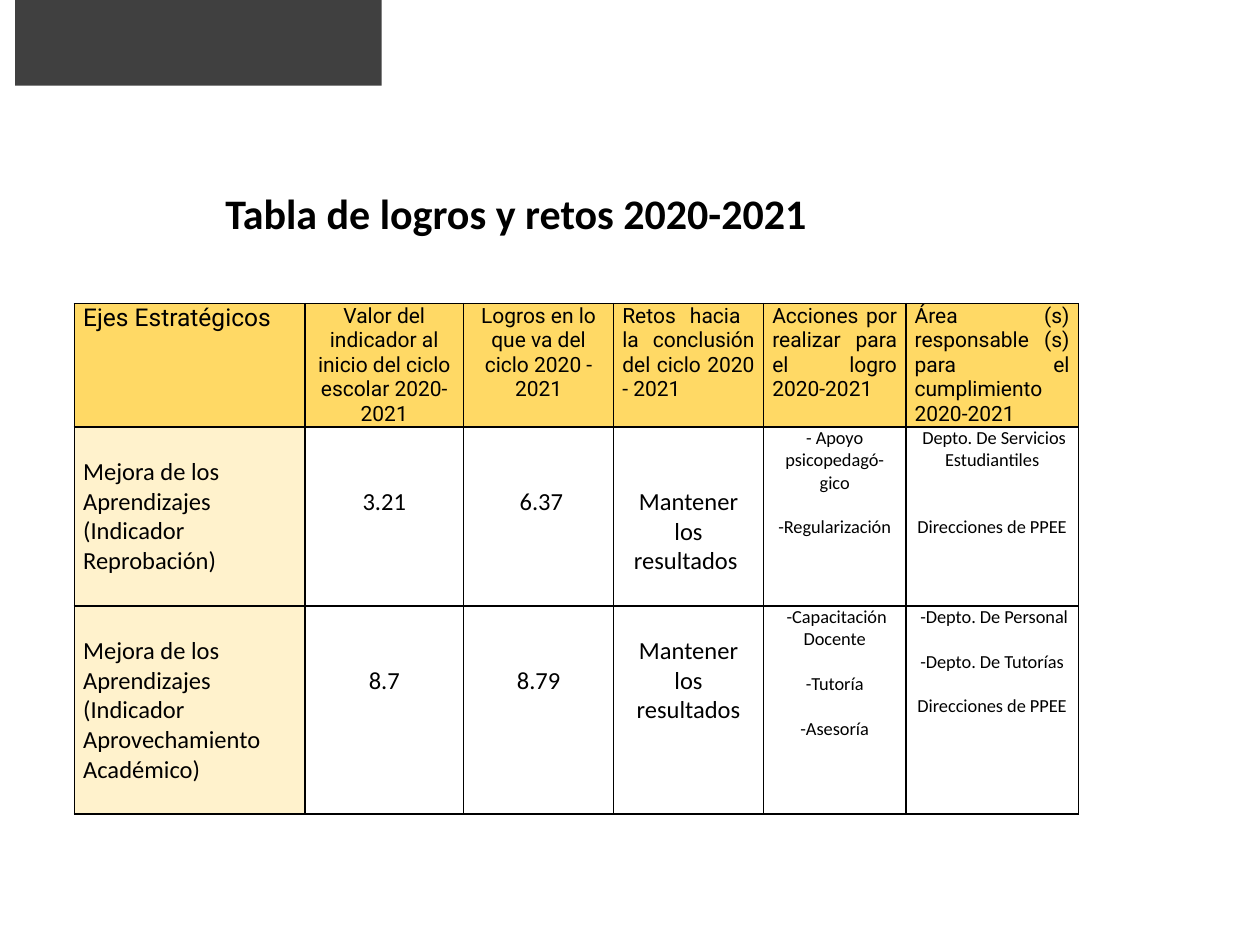
from lxml import etree
from pptx import Presentation
from pptx.dml.color import RGBColor
from pptx.enum import shapes, text
from pptx.oxml import ns
from pptx.util import Inches, Pt

MID, JUST, LEFT = text.PP_ALIGN.CENTER, text.PP_ALIGN.JUSTIFY, text.PP_ALIGN.LEFT
BLACK, WHITE, GOLD, CREAM = "000000", "FFFFFF", "FFD965", "FFF2CC"
LEAD = 1.22  # line height as a share of the text size

COLS = [1.83, 1.26, 1.19, 1.19, 1.13, 1.37]
ROWS = [0.98, 1.42, 1.65]

# Header cells: text, size, alignment
HEADS = [
    ("Ejes Estratégicos", 14, JUST),
    ("Valor del indicador al inicio del ciclo escolar 2020-2021", 12, MID),
    ("Logros en lo que va del ciclo 2020 - 2021", 12, MID),
    ("Retos hacia  la  conclusión del ciclo 2020 - 2021", 12, JUST),
    ("Acciones por realizar para el logro 2020-2021", 12, JUST),
    ("Área (s) responsable (s) para el cumplimiento 2020-2021", 12, JUST),
]
# Body cells: lines left free at the top, lines between paragraphs, paragraphs
BODY = [
    [
        (1, 0, ["Mejora de los Aprendizajes", "(Indicador Reprobación)"]),
        (2, 0, ["3.21"]),
        (2, 0, [" 6.37"]),
        (2, 0, ["Mantener los resultados "]),
        (0, 1, ["- Apoyo psicopedagó-gico", "-Regularización"]),
        (0, 2, [" Depto. De Servicios Estudiantiles", "Direcciones de PPEE"]),
    ],
    [
        (1, 0, ["Mejora de los Aprendizajes",
                "(Indicador Aprovechamiento Académico)"]),
        (2, 0, ["8.7"]),
        (2, 0, ["8.79"]),
        (1, 0, ["Mantener los resultados"]),
        (0, 1, [" -Capacitación Docente", "-Tutoría", "-Asesoría"]),
        (0, 1, [" -Depto. De Personal", "-Depto. De Tutorías",
                "Direcciones de PPEE"]),
    ],
]


def tint(code):
    return RGBColor.from_string(code)


def add_run(para, words, size, font="Calibri", bold=False):
    run = para.add_run()
    run.text = words
    run.font.size, run.font.name = Pt(size), font
    run.font.bold = bold
    run.font.color.rgb = tint(BLACK)


def edge(cell):
    """Draw a thin black line on the four sides of a cell."""
    props = cell._tc.get_or_add_tcPr()
    for side in ("lnL", "lnR", "lnT", "lnB"):
        line = etree.SubElement(props, ns.qn("a:" + side), w=str(Pt(1)))
        fill = etree.SubElement(line, ns.qn("a:solidFill"))
        etree.SubElement(fill, ns.qn("a:srgbClr"), val=BLACK)


def fill_cell(cell, lines, size, align, back, font="Calibri", top=0, gap=0):
    edge(cell)
    cell.fill.solid()
    cell.fill.fore_color.rgb = tint(back)
    cell.margin_left = cell.margin_right = Inches(0.07)
    cell.margin_top, cell.margin_bottom = Pt(round(top * size * LEAD, 1)), 0
    frame = cell.text_frame
    for i, words in enumerate(lines):
        para = frame.add_paragraph() if i else frame.paragraphs[0]
        para.alignment = align
        if i and gap:
            para.space_before = Pt(round(gap * size * LEAD, 1))
        add_run(para, words, size, font)


def add_band(slide, x, y, w, h):
    band = slide.shapes.add_shape(
        shapes.MSO_SHAPE.RECTANGLE, Inches(x), Inches(y), Inches(w), Inches(h))
    band.shadow.inherit = False
    band.fill.solid()
    band.fill.fore_color.rgb = tint("404040")
    band.line.fill.background()


def add_title(slide, x, y, w, h):
    box = slide.shapes.add_textbox(Inches(x), Inches(y), Inches(w), Inches(h))
    box.text_frame.word_wrap = True
    add_run(box.text_frame.paragraphs[0],
            "Tabla de logros y retos 2020-2021", 24, bold=True)


def add_goals(slide, x, y, w, h):
    table = slide.shapes.add_table(
        len(ROWS), len(COLS), Inches(x), Inches(y), Inches(w), Inches(h)).table
    table.horz_banding = False
    for col, wide in zip(table.columns, COLS):
        col.width = Inches(wide)
    for row, high in zip(table.rows, ROWS):
        row.height = Inches(high)
    # Header row
    for c, (words, size, align) in enumerate(HEADS):
        fill_cell(table.cell(0, c), [words], size, align, GOLD, "Roboto")
    # One row for each strategic axis
    for r, row in enumerate(BODY, 1):
        for c, (top, gap, lines) in enumerate(row):
            fill_cell(table.cell(r, c), lines, 14 if c < 4 else 10.5,
                      MID if c else LEFT, WHITE if c else CREAM,
                      top=top, gap=gap)


def main():
    deck = Presentation()
    deck.slide_width, deck.slide_height = Inches(10), Inches(7.5)
    slide = deck.slides.add_slide(deck.slide_layouts[6])
    add_goals(slide, 0.59, 2.41, sum(COLS), sum(ROWS))
    add_title(slide, 1.69, 1.44, 5, 0.5)
    add_band(slide, 0.12, 0, 2.91, 0.68)
    deck.save("out.pptx")


if __name__ == "__main__":
    main()
